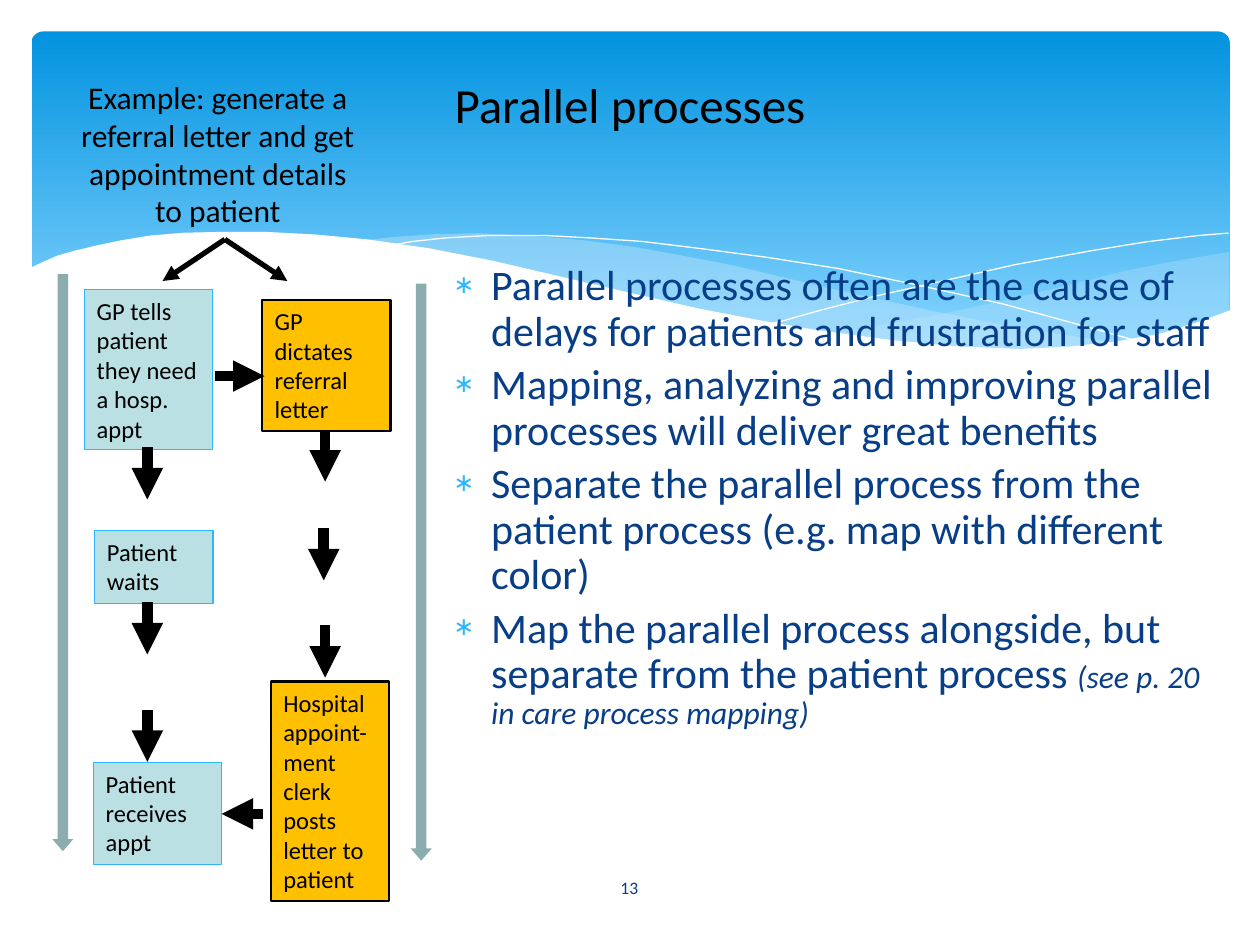
import pptx
import pptx.dml.color
import pptx.enum.dml
import pptx.enum.shapes
import pptx.enum.text
import pptx.oxml
import pptx.oxml.ns
import pptx.util

Pt = pptx.util.Pt
SHAPE = pptx.enum.shapes.MSO_SHAPE
ALIGN = pptx.enum.text.PP_ALIGN
ANCHOR = pptx.enum.text.MSO_ANCHOR
FONT = "Calibri"

COLORS = {
    "sky_top": "0293E0", "sky_bottom": "83D3FE", "wave": "C6E7FC", "white": "FFFFFF",
    "navy": "073E87", "black": "000000", "bullet": "31B6FD",
    "patient": "BBE0E3", "parallel": "FFC000", "timeline": "8CADAE",
}

RIGHT_WAVE = [
    (702, 144), (673, 149), (642, 155), (620, 160.6), (579, 170.6), (542, 178.6),
    (508, 185), (476, 190.8), (508, 195), (536, 198), (562, 199.4), (586, 200),
    (609, 199), (634, 197), (657, 193.5), (678, 188), (693, 181.5), (702.5, 178),
    (702.5, 144)]
MIDDLE_WAVE = [
    (643, 196.6), (623.5, 193.7), (581, 187.2), (533.5, 177.8), (481, 166.3),
    (453, 159.8), (420.5, 152), (389.5, 146), (361.5, 141), (335, 137.5),
    (302.4, 134.6), (273.6, 133.2), (247.7, 133.9), (225.4, 135.4), (206, 137.5),
    (232.6, 141), (260.6, 146), (291, 152), (323.3, 159.8), (381.6, 172.8),
    (420.5, 181.4), (456.5, 188), (489.6, 193), (520, 197.3), (548, 199.4),
    (573, 200.2), (596, 200.2), (617, 199.4)]
FALLING_CURVE = [
    (222.5, 140.4), (236, 138), (254, 136), (278.6, 134.6), (311.8, 134.6),
    (337.7, 136), (367, 138), (400, 142), (437.8, 147), (478.8, 153.4),
    (523.4, 162.7), (572.4, 173.5), (625.7, 188), (653, 195.8)]
RISING_CURVE = [
    (441.4, 185), (470, 177), (500.4, 169.2), (538.6, 160.6), (580.3, 151.2),
    (623.5, 143.3), (655, 138.2), (684.7, 134.6), (702, 133.2)]
WHITE_WAVE = [
    (703.4, 177.1), (684, 184.3), (662.4, 190.8), (638.6, 195), (612, 198),
    (582.5, 199.4), (548, 198), (509.8, 194.4), (466.6, 188.6), (434, 183),
    (399.6, 176.4), (362, 167.8), (321.8, 158.4), (281.5, 149), (244.8, 141.8),
    (210, 136.8), (180, 134), (152, 132.5), (127.4, 132.5), (105, 133),
    (85.7, 134.6), (68.4, 137.5), (54.7, 140.4), (42.5, 143.3), (33, 146),
    (26, 149), (16.6, 153.4), (16.6, 236.9), (703.4, 236.9)]

STEPS = [
    ("GP tells patient they need a hosp. appt", 48.2, 165.6, 73.4, 91.4, "patient"),
    ("Patient waits", 54, 303.1, 67.7, 41.8, "patient"),
    ("Patient receives appt", 53.3, 435.6, 73.4, 58.3, "patient"),
    ("GP dictates referral letter", 149.8, 171.4, 73.4, 74.9, "parallel"),
    ("Hospital appoint-ment clerk posts letter to patient",
     154.8, 389.5, 67.7, 125.3, "parallel"),
]
STEP_BORDERS = {"patient": ("bullet", 0.75), "parallel": ("black", 1.25)}
DOWN_FLOWS = [(84.2, 255.6), (84.2, 344.2), (84.2, 405.6),
              (185.8, 245.5), (185, 301.9), (185.8, 357.4)]
FLOW_LENGTH = 29.8

POINTS = [
    ("Parallel processes often are the cause of delays for patients and "
     "frustration for staff", ""),
    ("Mapping, analyzing and improving parallel processes will deliver great benefits", ""),
    ("Separate the parallel process from the patient process "
     "(e.g. map with different color)", ""),
    ("Map the parallel process alongside, but separate from the patient process ",
     "(see p. 20 in care process mapping)"),
]


def rgb(name):
    return pptx.dml.color.RGBColor.from_string(COLORS[name])


def add_xml(parent, tag, **attributes):
    child = pptx.oxml.parse_xml(f"<a:{tag} {pptx.oxml.ns.nsdecls('a')}/>")
    for key, value in attributes.items():
        child.set(key, str(value))
    parent.append(child)
    return child


def style_font(paragraph, size, color):
    paragraph.font.name = FONT
    paragraph.font.size = Pt(size)
    paragraph.font.color.rgb = rgb(color)


def add_block(slide, kind, left, top, width, height, fill, border=None, weight=0):
    block = slide.shapes.add_shape(kind, Pt(left), Pt(top), Pt(width), Pt(height))
    block.shadow.inherit = False
    block.fill.solid()
    block.fill.fore_color.rgb = rgb(fill)
    if border:
        block.line.color.rgb = rgb(border)
        block.line.width = Pt(weight)
    else:
        block.line.fill.background()
    return block


def add_sky(slide):
    sky = add_block(slide, SHAPE.ROUNDED_RECTANGLE, 18, 18, 684.7, 194.4, "sky_top")
    sky.adjustments[0] = 0.034
    sky.fill.gradient()
    sky.fill.gradient_angle = 270
    for stop, color, place in zip(sky.fill.gradient_stops, ("sky_top", "sky_bottom"), (0, 0.9)):
        stop.color.rgb = rgb(color)
        stop.position = place


def add_outline(slide, points, fill=None, opacity=100):
    vertices = [(Pt(x), Pt(y)) for x, y in points]
    builder = slide.shapes.build_freeform(*vertices[0])
    builder.add_line_segments(vertices[1:], close=fill is not None)
    outline = builder.convert_to_shape()
    outline.shadow.inherit = False
    if fill is None:
        outline.fill.background()
        outline.line.color.rgb = rgb("white")
        outline.line.width = Pt(0)
        return
    outline.fill.solid()
    outline.fill.fore_color.rgb = rgb(fill)
    outline.line.fill.background()
    if opacity < 100:
        color = outline.fill._xPr.find(".//" + pptx.oxml.ns.qn("a:srgbClr"))
        add_xml(color, "alpha", val=opacity * 1000)


def add_arrow(slide, start, end, weight=6):
    arrow = slide.shapes.add_connector(
        pptx.enum.shapes.MSO_CONNECTOR.STRAIGHT, *(Pt(v) for v in (*start, *end)))
    arrow.line.color.rgb = rgb("black")
    arrow.line.width = Pt(weight)
    add_xml(arrow.line._get_or_add_ln(), "tailEnd", type="triangle")
    add_xml(arrow._element.spPr, "effectLst")


def add_text_frame(slide, left, top, width, height):
    frame = slide.shapes.add_textbox(Pt(left), Pt(top), Pt(width), Pt(height)).text_frame
    frame.word_wrap = True
    return frame


def add_label(slide, text, left, top, width, height, size, color, anchor=ANCHOR.MIDDLE):
    frame = add_text_frame(slide, left, top, width, height)
    frame.vertical_anchor = anchor
    frame.text = text
    frame.paragraphs[0].alignment = ALIGN.CENTER
    style_font(frame.paragraphs[0], size, color)
    return frame


def add_step(slide, text, left, top, width, height, role):
    step = add_block(slide, SHAPE.RECTANGLE, left, top, width, height, role, *STEP_BORDERS[role])
    frame = step.text_frame
    frame.word_wrap = True
    frame.auto_size = pptx.enum.text.MSO_AUTO_SIZE.SHAPE_TO_FIT_TEXT
    frame.vertical_anchor = ANCHOR.TOP
    frame.text = text
    frame.paragraphs[0].alignment = ALIGN.LEFT
    style_font(frame.paragraphs[0], 14, "black")


def add_points(slide):
    frame = add_text_frame(slide, 252, 147.6, 455.8, 356.4)
    for index, (text, reference) in enumerate(POINTS):
        point = frame.add_paragraph() if index else frame.paragraphs[0]
        point.line_spacing = 0.9
        point.space_before = Pt(4.8)
        properties = point._p.get_or_add_pPr()
        properties.set("marL", str(Pt(21.6)))
        properties.set("indent", str(Pt(-21.6)))
        add_xml(add_xml(properties, "buClr"), "srgbClr", val=COLORS["bullet"])
        add_xml(properties, "buSzPct", val=60000)
        add_xml(properties, "buFont", typeface=FONT)
        add_xml(properties, "buChar", char="∗")
        style_font(point, 24, "navy")
        point.add_run().text = text
        if reference:
            aside = point.add_run()
            aside.text = reference
            aside.font.size = Pt(18)
            aside.font.italic = True


def main():
    deck = pptx.Presentation()
    deck.slide_width, deck.slide_height = Pt(720), Pt(540)
    slide = deck.slides.add_slide(deck.slide_layouts[6])

    add_sky(slide)
    add_outline(slide, RIGHT_WAVE, "wave", 29)
    add_outline(slide, MIDDLE_WAVE, "wave", 40)
    add_outline(slide, FALLING_CURVE)
    add_outline(slide, RISING_CURVE)
    add_outline(slide, WHITE_WAVE, "white")

    add_label(slide, "13", 313.9, 492.5, 91.4, 28.8, 10, "navy")
    title = add_label(slide, "Parallel processes", 36, 26.6, 648, 98.6, 28, "black")
    title.margin_bottom = Pt(37)
    add_points(slide)

    for step in STEPS:
        add_step(slide, *step)
    for left, top in ((29.9, 156.6), (234.7, 162)):
        timeline = add_block(slide, SHAPE.DOWN_ARROW, left, top, 12, 329.8, "timeline")
        timeline.adjustments[1] = 0.58
    for x, y in DOWN_FLOWS:
        add_arrow(slide, (x, y), (x, y + FLOW_LENGTH))
    add_arrow(slide, (123.1, 214.9), (151.2, 214.9))
    add_arrow(slide, (150.5, 465.1), (126.7, 465.1))

    add_label(slide, "Example: generate a referral letter and get appointment details to patient",
              37.4, 41, 174.2, 126, 18, "black", ANCHOR.TOP)
    for x in (92.9, 164.2):
        add_arrow(slide, (128.5, 136.8), (x, 160.6), 3)

    deck.save("out.pptx")


if __name__ == "__main__":
    main()
